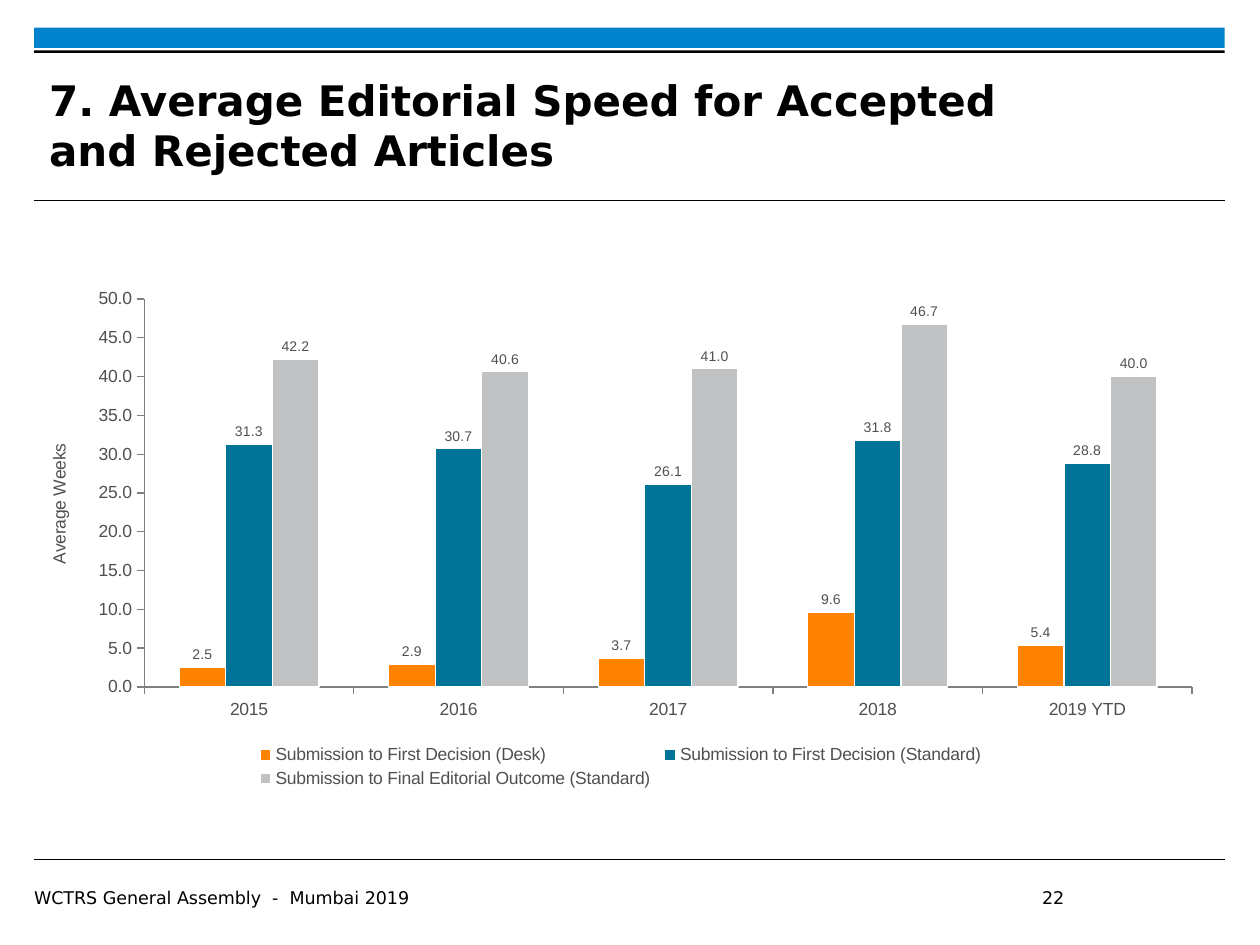
from lxml.etree import SubElement
from pptx import Presentation
from pptx.chart.data import CategoryChartData
from pptx.dml.color import RGBColor
from pptx.enum.chart import XL_CHART_TYPE, XL_LABEL_POSITION, XL_LEGEND_POSITION, XL_TICK_MARK
from pptx.enum.shapes import MSO_CONNECTOR, MSO_SHAPE
from pptx.enum.text import MSO_ANCHOR
from pptx.oxml import parse_xml
from pptx.oxml.ns import nsdecls, qn
from pptx.util import Inches, Pt

# Content
TITLE = "7. Average Editorial Speed for Accepted and Rejected Articles"
FOOT = "WCTRS General Assembly  -  Mumbai 2019\t22"
UNIT = "Average Weeks"
YEARS = ["2015", "2016", "2017", "2018", "2019 YTD"]
SERIES = [
    ("Submission to First Decision (Desk)", "FF8200", [2.5, 2.9, 3.7, 9.6, 5.4]),
    ("Submission to First Decision (Standard)", "007398", [31.3, 30.7, 26.1, 31.8, 28.8]),
    ("Submission to Final Editorial Outcome (Standard)", "C1C2C3", [42.2, 40.6, 41, 46.7, 40]),
]

# Theme
THEME = {
    "blue": "0083CC", "black": "000000", "white": "FFFFFF", "axis": "808080",
    "title": dict(name="DejaVu Sans", size=24, bold=True, color="000000"),
    "foot": dict(name="DejaVu Sans", size=10, bold=False, color="000000"),
    "chart": dict(name="Arial", size=10, bold=False, color="505050"),
    "label": dict(name="Arial", size=8, bold=False, color="505050"),
}

# Layout: one column between the margins, rows in inches
WIDE, HIGH = 10, 7.5
LEFT, SPAN = 0.27, 9.45
BARS = [(0.22, 0.16, "blue"), (0.4, 0.02, "black")]
RULES = [1.59, 6.82]
PLOT = (0.1, 0.04, 0.88, 0.755)  # shares of the chart: x, y, w, h
KEY = (0.19, 0.9, 0.62, 0.1)


def rgb(code):
    return RGBColor.from_string(code)


def style(font, look):
    for key, val in look.items():
        if key == "color":
            font.color.rgb = rgb(val)
        else:
            setattr(font, key, Pt(val) if key == "size" else val)


def put(slide, text, look, box, **frame):
    area = slide.shapes.add_textbox(*map(Inches, box)).text_frame
    form = dict(word_wrap=True, margin_left=0, margin_right=0,
                margin_top=0, margin_bottom=0, **frame)
    for key, val in form.items():
        setattr(area, key, val)
    para = area.paragraphs[0]
    run = para.add_run()
    run.text = text
    style(run.font, THEME[look])
    return para


def place(node, at, box, inner=False):
    """Give a chart part a fixed place, in shares of the chart."""
    for old in node.findall(qn("c:layout")):
        node.remove(old)
    rows = [("layoutTarget", "inner")] if inner else []
    rows += [("xMode", "edge"), ("yMode", "edge"), *zip("xywh", box)]
    body = "".join(f'<c:{tag} val="{val}"/>' for tag, val in rows)
    node.insert(at, parse_xml(
        f'<c:layout {nsdecls("c")}><c:manualLayout>{body}</c:manualLayout></c:layout>'))


def frame(slide):
    for top, tall, name in BARS:
        bar = slide.shapes.add_shape(
            MSO_SHAPE.RECTANGLE, *map(Inches, (LEFT, top, SPAN, tall)))
        bar.shadow.inherit = False
        bar.fill.solid()
        bar.fill.fore_color.rgb = rgb(THEME[name])
        bar.line.fill.background()
    for row in RULES:
        rule = slide.shapes.add_connector(
            MSO_CONNECTOR.STRAIGHT, *map(Inches, (LEFT, row, LEFT + SPAN, row)))
        rule.line.width = Pt(0.6)
        rule.line.color.rgb = rgb(THEME["black"])
        SubElement(rule._element.spPr, qn("a:effectLst"))


def graph(slide):
    data = CategoryChartData(number_format="0.0")
    data.categories = YEARS
    for name, _, vals in SERIES:
        data.add_series(name, vals)
    chart = slide.shapes.add_chart(
        XL_CHART_TYPE.COLUMN_CLUSTERED,
        *map(Inches, (0.2, 2.21, SPAN, 4.08)), data).chart
    chart.has_title = False
    style(chart.font, THEME["chart"])

    # Columns
    plot = chart.plots[0]
    for key, val in dict(gap_width=150, overlap=0, vary_by_categories=False).items():
        setattr(plot, key, val)
    for part, (_, color, _) in zip(plot.series, SERIES):
        part.format.fill.solid()
        part.format.fill.fore_color.rgb = rgb(color)
        part.format.line.color.rgb = rgb(THEME["white"])
        part.format.line.width = Pt(0.75)
        tags = part.data_labels
        form = dict(show_value=True, number_format="0.0",
                    number_format_is_linked=False, position=XL_LABEL_POSITION.OUTSIDE_END)
        for key, val in form.items():
            setattr(tags, key, val)
        style(tags.font, THEME["label"])

    # Axes
    side = chart.value_axis
    form = dict(has_major_gridlines=False, major_tick_mark=XL_TICK_MARK.OUTSIDE,
                minor_tick_mark=XL_TICK_MARK.NONE)
    for axis in (chart.category_axis, side):
        for key, val in form.items():
            setattr(axis, key, val)
        axis.format.line.color.rgb = rgb(THEME["axis"])
        style(axis.tick_labels.font, THEME["chart"])
    for key, val in dict(minimum_scale=0, maximum_scale=50, major_unit=5).items():
        setattr(side, key, val)
    side.tick_labels.number_format = "0.0"
    side.tick_labels.number_format_is_linked = False
    run = side.axis_title.text_frame.paragraphs[0].add_run()
    run.text = UNIT
    style(run.font, THEME["chart"])

    # Legend
    chart.has_legend = True
    key = chart.legend
    key.position = XL_LEGEND_POSITION.BOTTOM
    key.include_in_layout = False
    style(key.font, THEME["chart"])
    root = chart._chartSpace
    place(root.find(".//" + qn("c:plotArea")), 0, PLOT, inner=True)
    place(root.find(".//" + qn("c:legend")), 1, KEY)


def main():
    deck = Presentation()
    deck.slide_width, deck.slide_height = Inches(WIDE), Inches(HIGH)
    slide = deck.slides.add_slide(deck.slide_layouts[6])
    frame(slide)
    put(slide, TITLE, "title", (0.39, 0.53, 7.52, 0.92),
        vertical_anchor=MSO_ANCHOR.MIDDLE)
    foot = put(slide, FOOT, "foot", (LEFT, 7.04, SPAN, 0.25))
    stops = SubElement(foot._p.get_or_add_pPr(), qn("a:tabLst"))
    SubElement(stops, qn("a:tab"), pos=str(Inches(8)), algn="l")
    graph(slide)
    deck.save("out.pptx")


if __name__ == "__main__":
    main()
